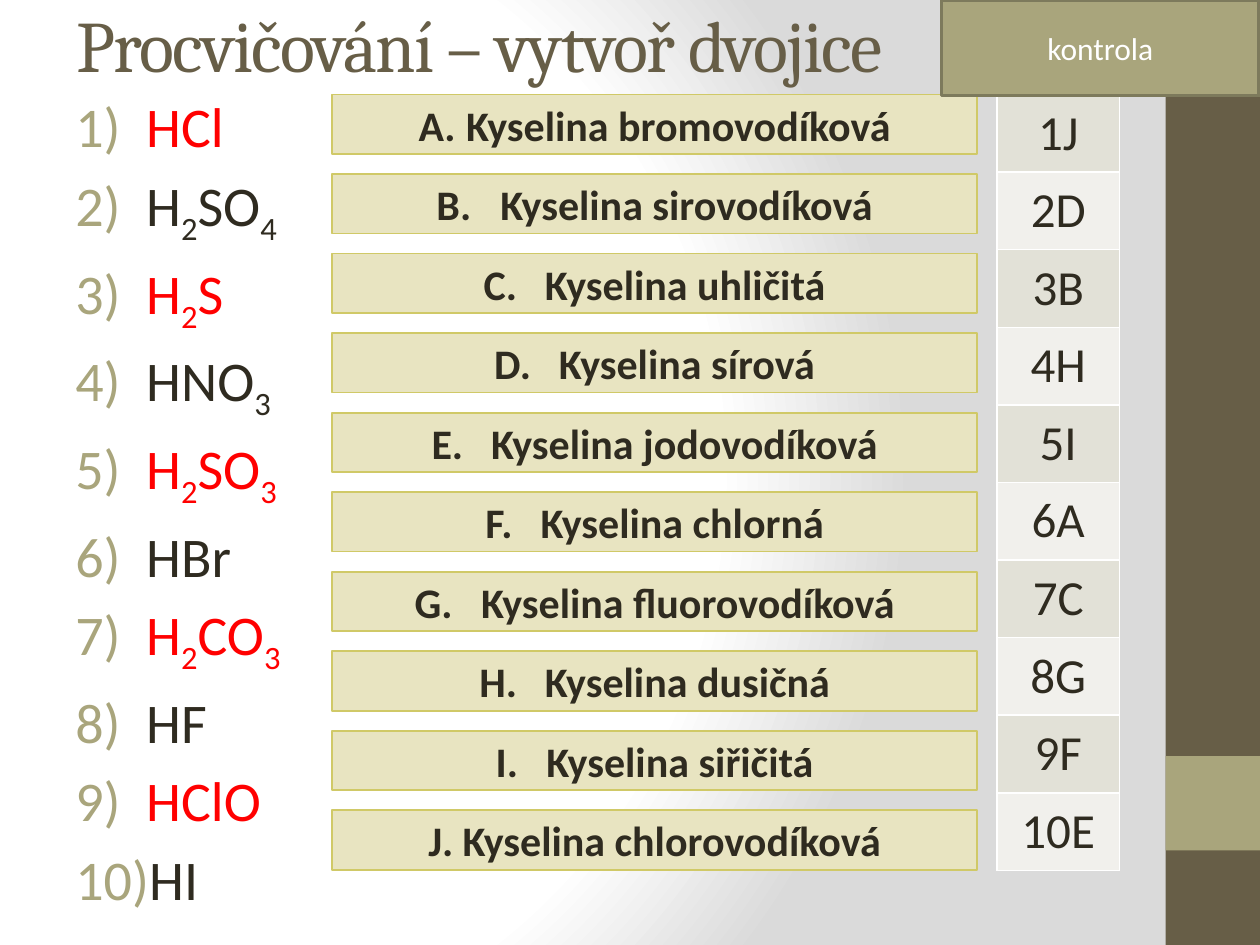
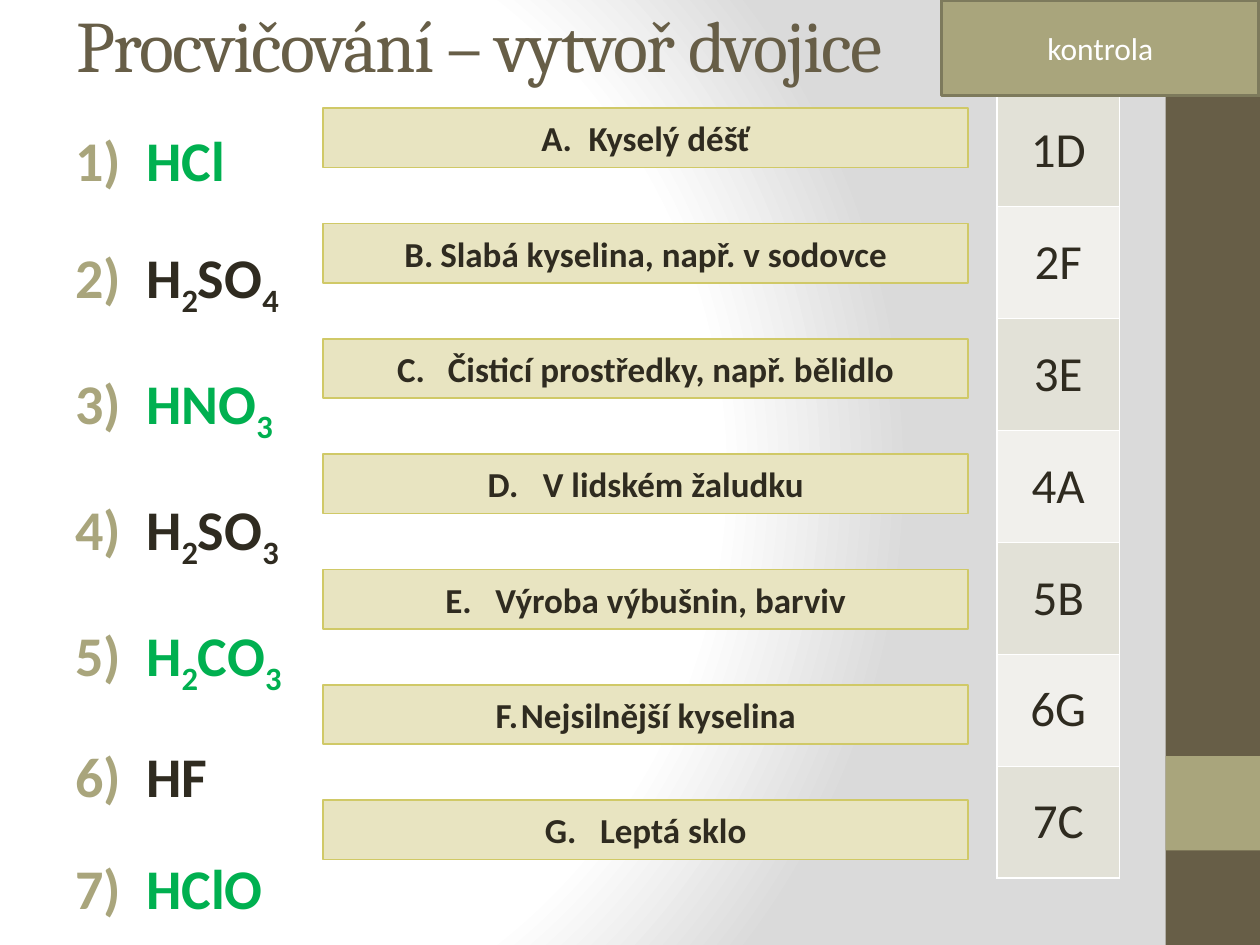
from itertools import groupby

from pptx import Presentation
from pptx.dml.color import RGBColor
from pptx.enum.shapes import MSO_SHAPE
from pptx.enum.text import MSO_ANCHOR, PP_ALIGN
from pptx.oxml import parse_xml
from pptx.oxml.ns import nsdecls, qn
from pptx.util import Pt

BROWN = RGBColor(0x67, 0x5E, 0x47)
OLIVE = RGBColor(0xA9, 0xA5, 0x7C)
OLIVE_EDGE = RGBColor(0x7D, 0x7A, 0x5C)
CREAM = RGBColor(0xE8, 0xE4, 0xC1)
CREAM_EDGE = RGBColor(0xD0, 0xC9, 0x67)
DARK = RGBColor(0x2F, 0x2B, 0x20)
RED = RGBColor(0xFF, 0x00, 0x00)
GREEN = RGBColor(0x00, 0xB0, 0x50)
WHITE = RGBColor(0xFF, 0xFF, 0xFF)
GRAY = RGBColor(0xDA, 0xDA, 0xDA)
ROW_FILLS = RGBColor(0xE2, 0xE1, 0xD7), RGBColor(0xF1, 0xF0, 0xEC)
TITLE_FONT, BODY_FONT = "Cambria", "Calibri"

ACID_FORMULAS = ["HCl", "H2SO4", "H2S", "HNO3", "H2SO3", "HBr", "H2CO3", "HF", "HClO", "HI"]
ACID_NAMES = [
    ("Kyselina bromovodíková", 27), ("Kyselina sirovodíková", 36.5),
    ("Kyselina uhličitá", 35), ("Kyselina sírová", 37),
    ("Kyselina jodovodíková", 34), ("Kyselina chlorná", 31.5),
    ("Kyselina fluorovodíková", 38), ("Kyselina dusičná", 37.5),
    ("Kyselina siřičitá", 29), ("Kyselina chlorovodíková", 19.5),
]
ACID_ANSWERS = ["1J", "2D", "3B", "4H", "5I", "6A", "7C", "8G", "9F", "10E"]

USED_FORMULAS = ["HCl", "H2SO4", "HNO3", "H2SO3", "H2CO3", "HF", "HClO"]
ACID_USES = [
    ("Kyselý déšť", 27), ("Slabá kyselina, např. v sodovce", 20.5),
    ("Čisticí prostředky, např. bělidlo", 29), ("V lidském žaludku", 31.5),
    ("Výroba výbušnin, barviv", 28.5), ("Nejsilnější kyselina", 14.5),
    ("Leptá sklo", 31.5),
]
USE_ANSWERS = ["1D", "2F", "3E", "4A", "5B", "6G", "7C"]


def style_font(font, size, color, bold=False, name=BODY_FONT):
    """Set the face, size, colour and weight of a font."""
    font.name = name
    font.size = Pt(size)
    font.bold = bold
    font.color.rgb = color


def add_number(paragraph, scheme, start, hang, color):
    """Number a paragraph automatically with a hanging indent."""
    properties = paragraph._p.get_or_add_pPr()
    properties.set("marL", str(Pt(hang)))
    properties.set("indent", str(-Pt(hang)))
    properties.append(parse_xml(
        f'<a:buClr {nsdecls("a")}><a:srgbClr val="{color}"/></a:buClr>'))
    properties.append(parse_xml(
        f'<a:buAutoNum {nsdecls("a")} type="{scheme}" startAt="{start}"/>'))


def set_background(master):
    """Give the master a round white to gray gradient."""
    master.background.fill.gradient()
    gradient = master.element.find(".//" + qn("a:gradFill"))
    stops = "".join(
        f'<a:gs pos="{position * 1000}"><a:srgbClr val="{color}"/></a:gs>'
        for position, color in ((0, WHITE), (75, WHITE), (100, GRAY)))
    gradient.getparent().replace(gradient, parse_xml(
        f'<a:gradFill {nsdecls("a")} rotWithShape="1"><a:gsLst>{stops}</a:gsLst>'
        '<a:path path="circle">'
        '<a:fillToRect l="20000" t="50000" r="100000" b="50000"/>'
        '</a:path></a:gradFill>'))


def add_box(slide, left, top, width, height, fill, edge=None, edge_width=1):
    """Draw a flat rectangle, outlined if an edge colour is given."""
    shape = slide.shapes.add_shape(
        MSO_SHAPE.RECTANGLE, Pt(left), Pt(top), Pt(width), Pt(height))
    shape.shadow.inherit = False
    shape.fill.solid()
    shape.fill.fore_color.rgb = fill
    if edge is None:
        shape.line.fill.background()
    else:
        shape.line.color.rgb = edge
        shape.line.width = Pt(edge_width)
    return shape


def write_centered(shape, text, size, color, bold=False):
    """Centre one line of text in a shape or cell and return its paragraph."""
    text_frame = shape.text_frame
    text_frame.text = text
    text_frame.word_wrap = True
    paragraph = text_frame.paragraphs[0]
    paragraph.alignment = PP_ALIGN.CENTER
    style_font(paragraph.runs[0].font, size, color, bold)
    shape.vertical_anchor = MSO_ANCHOR.MIDDLE
    return paragraph


def add_text_frame(slide, left, top, width, height):
    """Add a wrapping text box and return its text frame."""
    text_frame = slide.shapes.add_textbox(
        Pt(left), Pt(top), Pt(width), Pt(height)).text_frame
    text_frame.word_wrap = True
    return text_frame


def add_title(slide, text):
    """Write the slide title."""
    text_frame = add_text_frame(slide, 36.7, 0, 648, 50)
    text_frame.vertical_anchor = MSO_ANCHOR.MIDDLE
    text_frame.text = text
    run = text_frame.paragraphs[0].runs[0]
    style_font(run.font, 41.4, BROWN, name=TITLE_FONT)
    run._r.get_or_add_rPr().set("spc", "-100")


def add_formulas(slide, formulas, accent, bold, line_spacing):
    """List the formulas with lowered digits and alternating colours."""
    text_frame = add_text_frame(slide, 36, 49, 170.6, 481.7)
    for index, formula in enumerate(formulas):
        paragraph = text_frame.add_paragraph() if index else text_frame.paragraphs[0]
        paragraph.space_before = Pt(6.4)
        paragraph.line_spacing = line_spacing
        add_number(paragraph, "arabicParenR", 1, 40.5, OLIVE)
        for is_digit, characters in groupby(formula, str.isdigit):
            run = paragraph.add_run()
            run.text = "".join(characters)
            style_font(run.font, 32, DARK if index % 2 else accent, bold)
            if is_digit:
                run._r.get_or_add_rPr().set("baseline", "-25000")


def add_choices(slide, choices, left, top, pitch, size):
    """Stack the lettered choices at equal steps."""
    for index, (text, hang) in enumerate(choices):
        box = add_box(slide, left, top + index * pitch, 368.6, 34, CREAM, CREAM_EDGE)
        text_frame = box.text_frame
        paragraph = write_centered(box, text, size, DARK, bold=True)
        text_frame.vertical_anchor = MSO_ANCHOR.MIDDLE
        add_number(paragraph, "alphaUcPeriod", index + 1, hang, DARK)


def add_answers(slide, answers, row_height):
    """Add the one-column table of answers."""
    table = slide.shapes.add_table(
        len(answers), 1, Pt(569.7), Pt(54), Pt(70), Pt(row_height * len(answers))).table
    table.first_row = table.horz_banding = False
    for index, answer in enumerate(answers):
        table.rows[index].height = Pt(row_height)
        cell = table.cell(index, 0)
        write_centered(cell, answer, 28, DARK)
        properties = cell._tc.get_or_add_tcPr()
        for side in ("lnL", "lnR", "lnT", "lnB"):
            properties.append(parse_xml(
                f'<a:{side} {nsdecls("a")} w="{Pt(1)}"><a:solidFill>'
                f'<a:srgbClr val="{WHITE}"/></a:solidFill></a:{side}>'))
        cell.fill.solid()
        cell.fill.fore_color.rgb = ROW_FILLS[index % 2]


def add_check_button(slide):
    """Draw the button in the upper right corner."""
    button = add_box(slide, 538, 0, 181.5, 54.7, OLIVE, OLIVE_EDGE, 2)
    write_centered(button, "kontrola", 18, WHITE)
    button.text_frame.vertical_anchor = MSO_ANCHOR.MIDDLE


def start_slide(presentation):
    """Add a slide with the side band and the title."""
    slide = presentation.slides.add_slide(presentation.slide_layouts[6])
    add_box(slide, 666, 0, 54, 540, BROWN)
    add_box(slide, 666, 432, 54, 54, OLIVE)
    add_title(slide, "Procvičování – vytvoř dvojice")
    return slide


def main():
    """Build both matching exercises and save them."""
    presentation = Presentation()
    presentation.slide_width, presentation.slide_height = Pt(720), Pt(540)
    set_background(presentation.slide_master)

    slide = start_slide(presentation)
    add_formulas(slide, ACID_FORMULAS, RED, bold=False, line_spacing=1.0)
    add_choices(slide, ACID_NAMES, left=189.8, top=54, pitch=45.45, size=24)
    add_answers(slide, ACID_ANSWERS, row_height=44.35)
    add_check_button(slide)

    slide = start_slide(presentation)
    add_formulas(slide, USED_FORMULAS, GREEN, bold=True, line_spacing=1.5)
    add_choices(slide, ACID_USES, left=184.7, top=61.8, pitch=65.9, size=20)
    add_answers(slide, USE_ANSWERS, row_height=64)
    add_check_button(slide)

    presentation.save("out.pptx")


if __name__ == "__main__":
    main()
